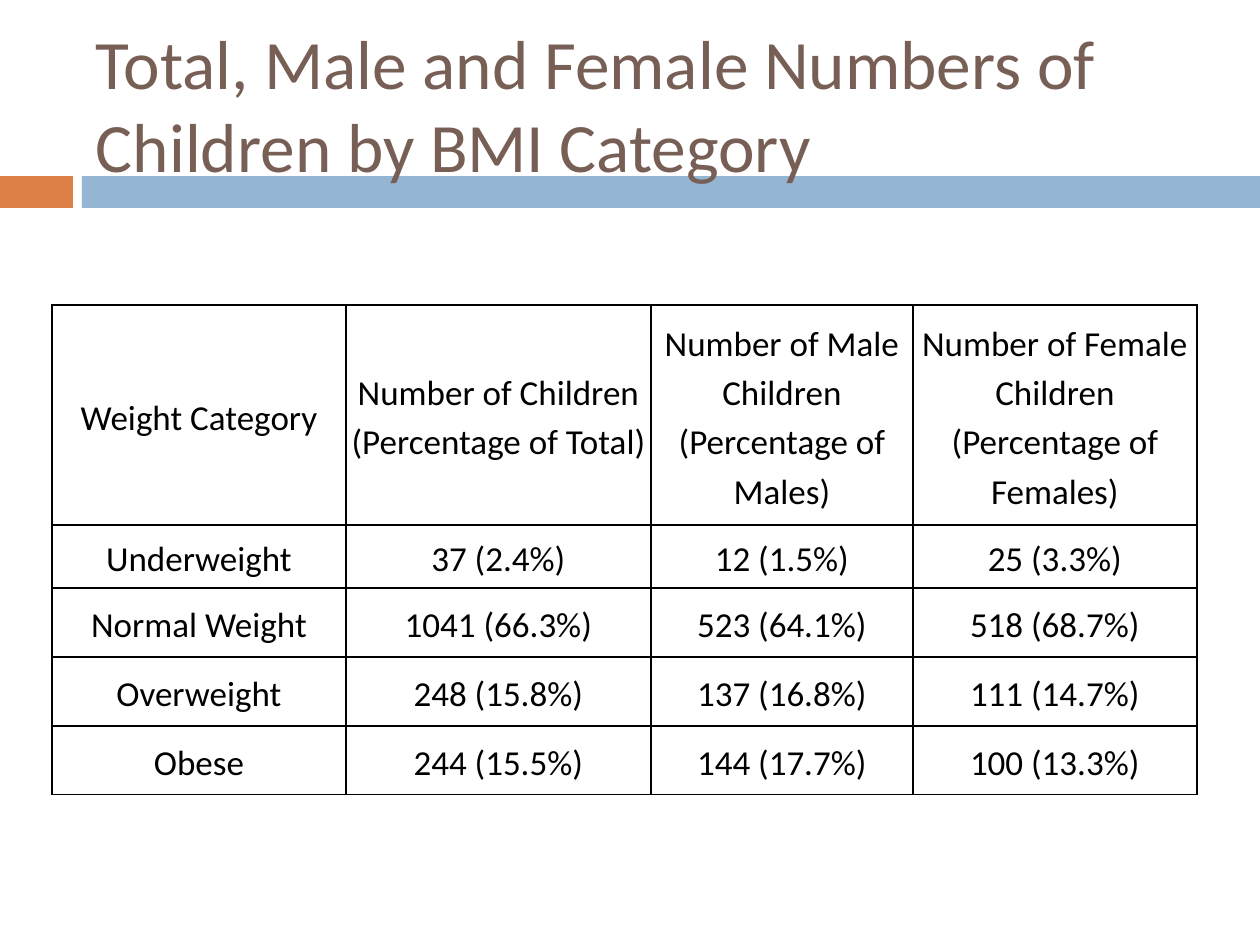
from pptx import Presentation
from pptx.dml.color import RGBColor
from pptx.enum.shapes import MSO_SHAPE
from pptx.enum.text import MSO_ANCHOR, PP_ALIGN
from pptx.oxml.ns import qn
from pptx.util import Pt
from lxml.etree import SubElement

PX = 914400 // 126
SLIDE_SIZE = (1260, 945)
BAND_TOP, BAND_HEIGHT = 176, 32
COLUMN_WIDTHS = [294, 305, 262, 284]
ROW_HEIGHTS = [220, 63, 69, 69, 69]
ROWS = [
    ["Weight Category", "Number of Children (Percentage of Total)",
     "Number of Male Children (Percentage of Males)",
     "Number of Female Children (Percentage of Females)"],
    ["Underweight", "37 (2.4%)", "12 (1.5%)", "25 (3.3%)"],
    ["Normal Weight", "1041 (66.3%)", "523 (64.1%)", "518 (68.7%)"],
    ["Overweight", "248 (15.8%)", "137 (16.8%)", "111 (14.7%)"],
    ["Obese", "244 (15.5%)", "144 (17.7%)", "100 (13.3%)"],
]


def px(*lengths):
    return [length * PX for length in lengths]


def color(value):
    return RGBColor.from_string(value)


def apply(target, values):
    for name, value in values.items():
        setattr(target, name, value)


class SlideBuilder:
    font_name = "Calibri"
    border_color = "000000"
    cell_format = {"margin_left": 5 * PX, "margin_right": 5 * PX,
                   "margin_top": 0, "margin_bottom": 0,
                   "vertical_anchor": MSO_ANCHOR.MIDDLE}
    cell_paragraph = {"alignment": PP_ALIGN.CENTER, "line_spacing": 1.15}
    title_frame = {"word_wrap": True, "vertical_anchor": MSO_ANCHOR.MIDDLE,
                   "margin_left": 12 * PX, "margin_right": 12 * PX,
                   "margin_top": 8 * PX, "margin_bottom": 0}

    def __init__(self, slide):
        self.slide = slide

    def add_text(self, paragraph, text, size, text_color):
        run = paragraph.add_run()
        run.text = text
        apply(run.font, {"name": self.font_name, "size": Pt(size)})
        run.font.color.rgb = color(text_color)

    def band(self, left, width, fill):
        shape = self.slide.shapes.add_shape(
            MSO_SHAPE.RECTANGLE, *px(left, BAND_TOP, width, BAND_HEIGHT))
        shape.shadow.inherit = False
        shape.fill.solid()
        shape.fill.fore_color.rgb = color(fill)
        shape.line.fill.background()

    def title(self, text, box):
        frame = self.slide.shapes.add_textbox(*px(*box)).text_frame
        apply(frame, self.title_frame)
        self.add_text(frame.paragraphs[0], text, 39.6, "775F55")

    def border(self, cell):
        properties = cell._tc.get_or_add_tcPr()
        for position, side in enumerate(("lnL", "lnR", "lnT", "lnB")):
            line = properties.makeelement(qn(f"a:{side}"), {"w": str(Pt(1))})
            fill = SubElement(line, qn("a:solidFill"))
            SubElement(fill, qn("a:srgbClr"), val=self.border_color)
            properties.insert(position, line)

    def table(self, rows, left, top):
        frame = self.slide.shapes.add_table(
            len(rows), len(rows[0]),
            *px(left, top, sum(COLUMN_WIDTHS), sum(ROW_HEIGHTS)))
        table = frame.table
        apply(table, {"first_row": False, "horz_banding": False})
        for column, width in zip(table.columns, px(*COLUMN_WIDTHS)):
            column.width = width
        for row, height, texts in zip(table.rows, px(*ROW_HEIGHTS), rows):
            row.height = height
            for cell, text in zip(row.cells, texts):
                apply(cell, self.cell_format)
                cell.fill.background()
                self.border(cell)
                paragraph = cell.text_frame.paragraphs[0]
                apply(paragraph, self.cell_paragraph)
                self.add_text(paragraph, text, 20, "000000")


def main():
    presentation = Presentation()
    presentation.slide_width, presentation.slide_height = px(*SLIDE_SIZE)
    slide = presentation.slides.add_slide(presentation.slide_layouts[6])
    builder = SlideBuilder(slide)
    builder.band(0, 73, "DD8047")
    builder.band(82, 1178, "94B6D2")
    builder.title("Total, Male and Female Numbers of Children by BMI Category",
                  (84, 31, 1124, 136))
    builder.table(ROWS, 52, 305)
    presentation.save("out.pptx")


if __name__ == "__main__":
    main()
